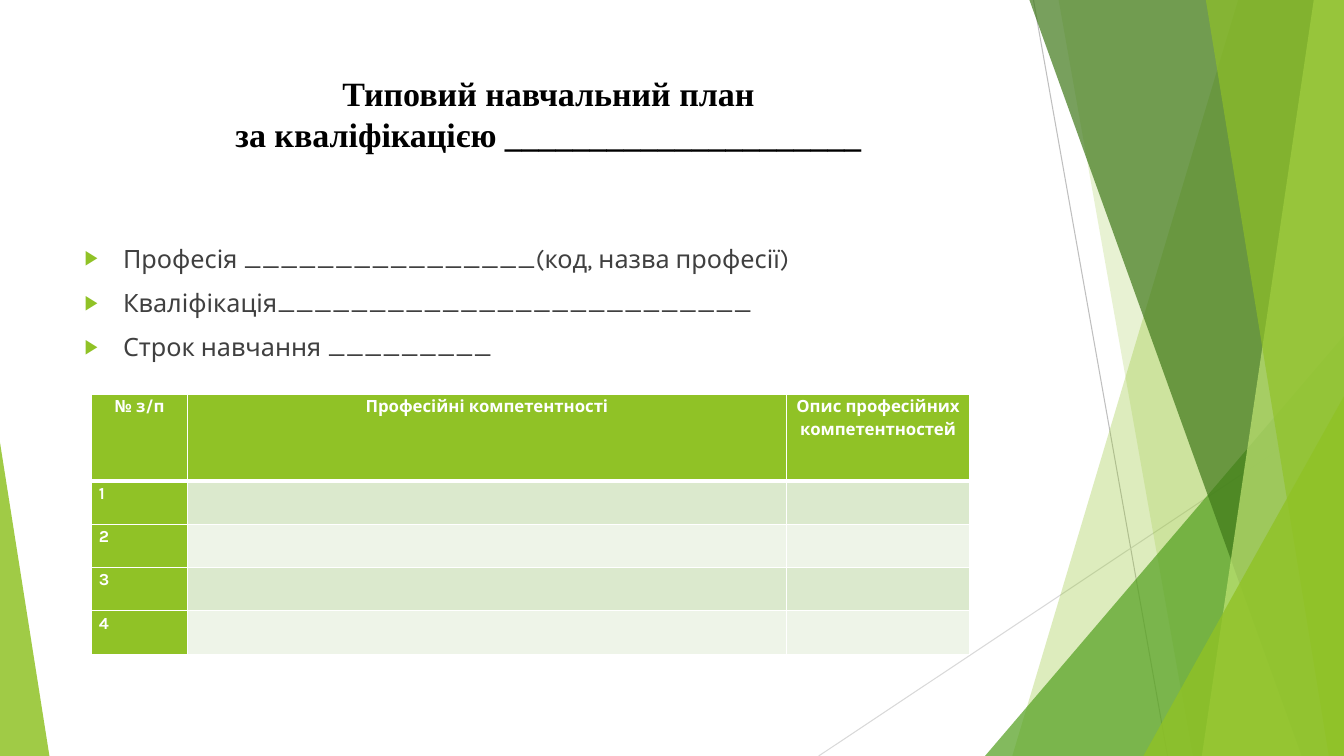
from lxml.etree import SubElement
from pptx import Presentation
from pptx.dml.color import RGBColor
from pptx.enum.shapes import MSO_CONNECTOR, MSO_SHAPE
from pptx.enum.text import MSO_ANCHOR, MSO_AUTO_SIZE, PP_ALIGN
from pptx.oxml import parse_xml
from pptx.oxml.ns import nsdecls, qn
from pptx.util import Inches, Pt

SLIDE_W, SLIDE_H = 13.33, 7.5
GREEN, WHITE = "90C226", "FFFFFF"
BANDS = ("DBE9CD", "EEF4E8")
LINES = [(10.25, 0, 11.58, 7.5, "BFBFBF"), (13.33, 4.03, 8.12, 7.5, "D9D9D9")]
BACK_SLIVERS = [(12.28, 10.04, GREEN, 30), (10.5, 11.83, GREEN, 20)]
FRONT_SLIVERS = [(10.21, 12.91, "3F7819", 70), (13.03, 11.92, "C0E474", 70),
                 (11.96, 13.18, GREEN, 65)]
TITLE = "Типовий навчальний план\vза кваліфікацією _____________________"
DETAILS = ["Професія ________________(код, назва професії)",
           "Кваліфікація__________________________",
           "Строк навчання _________"]
HEADERS = ["№ з/п", "Професійні компетентності", "Опис професійних компетентностей"]
COLUMN_WIDTHS = (0.95, 5.94, 1.82)
HEADER_HEIGHT, ROW_HEIGHT, ROW_COUNT = 0.86, 0.43, 4


def color(hex_code):
    """Return the colour for a hex string."""
    return RGBColor.from_string(hex_code)


def paint(shape, hex_code, opacity):
    """Give a shape a translucent fill without outline or shadow."""
    shape.shadow.inherit = False
    shape.line.fill.background()
    shape.fill.solid()
    shape.fill.fore_color.rgb = color(hex_code)
    tint = shape.fill._xPr.find(qn("a:solidFill"))[0]
    SubElement(tint, qn("a:alpha"), val=str(opacity * 1000))


def add_line(slide, x1, y1, x2, y2, hex_code):
    """Draw a thin decorative line."""
    line = slide.shapes.add_connector(
        MSO_CONNECTOR.STRAIGHT, Inches(x1), Inches(y1), Inches(x2), Inches(y2))
    line.line.color.rgb = color(hex_code)
    line.line.width = Pt(0.75)
    SubElement(line._element.spPr, qn("a:effectLst"))


def add_sliver(slide, top_left, bottom_left, hex_code, opacity):
    """Draw a full-height panel with a slanted left edge."""
    outline = slide.shapes.build_freeform(Inches(top_left), 0)
    corners = [(SLIDE_W, 0), (SLIDE_W, SLIDE_H), (bottom_left, SLIDE_H)]
    outline.add_line_segments([(Inches(x), Inches(y)) for x, y in corners])
    paint(outline.convert_to_shape(), hex_code, opacity)


def add_corner(slide, left, top, width, apex, hex_code, opacity):
    """Draw a right triangle standing on the bottom edge."""
    corner = slide.shapes.add_shape(
        MSO_SHAPE.ISOSCELES_TRIANGLE, Inches(left), Inches(top),
        Inches(width), Inches(SLIDE_H - top))
    corner.adjustments[0] = apex
    paint(corner, hex_code, opacity)


def style(paragraph, size, font_name, hex_code, bold=False):
    """Set the font of a paragraph."""
    font = paragraph.font
    font.size, font.name, font.bold = Pt(size), font_name, bold
    font.color.rgb = color(hex_code)


def place(placeholder, left, top, width, height):
    """Move a placeholder and align its text to the top."""
    placeholder.left, placeholder.top = Inches(left), Inches(top)
    placeholder.width, placeholder.height = Inches(width), Inches(height)
    placeholder.text_frame.vertical_anchor = MSO_ANCHOR.TOP
    placeholder.text_frame.auto_size = MSO_AUTO_SIZE.NONE


def add_bullet(paragraph):
    """Give a paragraph a green arrow bullet with a hanging indent."""
    properties = paragraph._p.get_or_add_pPr()
    properties.set("marL", str(Inches(0.38)))
    properties.set("indent", str(-Inches(0.38)))
    marks = (f'<a:buClr {nsdecls("a")}><a:srgbClr val="{GREEN}"/></a:buClr>',
             f'<a:buSzPct {nsdecls("a")} val="80000"/>',
             f'<a:buFont {nsdecls("a")} typeface="Arial"/>',
             f'<a:buChar {nsdecls("a")} char="▶"/>')
    for mark in marks:
        properties.insert_element_before(parse_xml(mark), "a:tabLst", "a:defRPr")


def fill_title(title):
    """Write the plan's heading."""
    place(title, 0.74, 0.67, 9.4, 1.44)
    title.text_frame.text = TITLE
    heading = title.text_frame.paragraphs[0]
    heading.alignment = PP_ALIGN.CENTER
    style(heading, 24.3, "Times New Roman", "000000", True)


def fill_details(body):
    """Write the list of blanks to fill in."""
    place(body, 0.74, 2.36, 9.4, 4.24)
    body.text_frame.text = "\n".join(DETAILS)
    for detail in body.text_frame.paragraphs:
        detail.space_before = Pt(10)
        style(detail, 18, "Karla", "404040")
        add_bullet(detail)


def add_borders(cell, top, bottom):
    """Draw white borders around a cell, widths in points."""
    sides = {"L": 1, "R": 1, "T": top, "B": bottom}
    for index, (side, width) in enumerate(sides.items()):
        cell._tc.get_or_add_tcPr().insert(index, parse_xml(
            f'<a:ln{side} {nsdecls("a")} w="{Pt(width)}"><a:solidFill>'
            f'<a:srgbClr val="{WHITE}"/></a:solidFill></a:ln{side}>'))


def fill_cell(cell, text, row, column):
    """Write and format one cell of the competence table."""
    cell.margin_left = cell.margin_right = Inches(0.07)
    cell.margin_top = cell.margin_bottom = 0
    cell.text = text
    entry = cell.text_frame.paragraphs[0]
    entry.line_spacing = 1.15
    entry.alignment = PP_ALIGN.CENTER if row == 0 else PP_ALIGN.LEFT
    style(entry, 12, "Karla", WHITE, True)
    cell.fill.solid()
    shaded = row == 0 or column == 0
    cell.fill.fore_color.rgb = color(GREEN if shaded else BANDS[(row - 1) % 2])
    add_borders(cell, 3 if row == 1 else 1, 3 if row == 0 else 1)


def add_competences(slide):
    """Build the table of professional competences."""
    rows = [HEADERS] + [[str(n), "", ""] for n in range(1, ROW_COUNT + 1)]
    table = slide.shapes.add_table(
        len(rows), len(HEADERS), Inches(0.91), Inches(3.91),
        Inches(sum(COLUMN_WIDTHS)),
        Inches(HEADER_HEIGHT + ROW_COUNT * ROW_HEIGHT)).table
    table.first_col = True
    for column, width in zip(table.columns, COLUMN_WIDTHS):
        column.width = Inches(width)
    for r, texts in enumerate(rows):
        table.rows[r].height = Inches(ROW_HEIGHT if r else HEADER_HEIGHT)
        for c, text in enumerate(texts):
            fill_cell(table.cell(r, c), text, r, c)


def add_decoration(slide):
    """Draw the green facets along the slide's edges."""
    for line in LINES:
        add_line(slide, *line)
    for sliver in BACK_SLIVERS:
        add_sliver(slide, *sliver)
    add_corner(slide, 9.77, 3.33, 3.56, 1, "54A021", 72)
    for sliver in FRONT_SLIVERS:
        add_sliver(slide, *sliver)
    add_corner(slide, 11.34, 3.93, 1.99, 1, GREEN, 80)
    add_corner(slide, 0, 4.39, 0.49, 0, GREEN, 85)


def main():
    """Build and save the curriculum slide."""
    deck = Presentation()
    deck.slide_width, deck.slide_height = Inches(SLIDE_W), Inches(SLIDE_H)
    slide = deck.slides.add_slide(deck.slide_layouts[1])
    add_decoration(slide)
    fill_title(slide.shapes.title)
    fill_details(slide.placeholders[1])
    add_competences(slide)
    deck.save("out.pptx")


if __name__ == "__main__":
    main()
